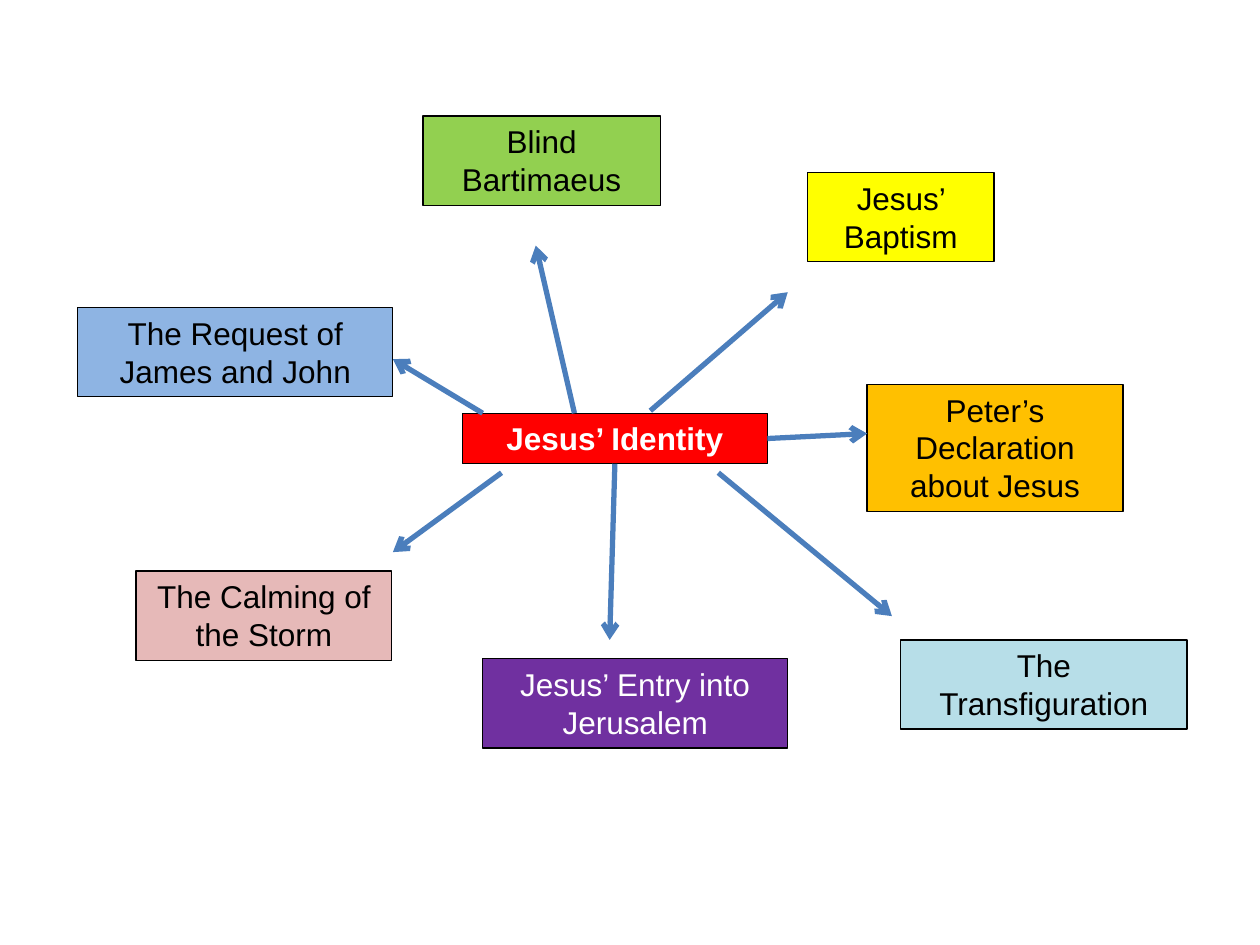
from lxml import etree
from pptx import Presentation
from pptx import util as u
from pptx.dml.color import RGBColor
from pptx.enum import shapes, text
from pptx.oxml.ns import qn

BLACK, WHITE, ARROW_BLUE = "000000", "FFFFFF", "4B7EBC"
BOTTOM, RIGHT = 2, 3


def paint(color_format, hex_color):
    color_format.rgb = RGBColor.from_string(hex_color)


class MindMap:
    font_name = "Arial"
    font_size = u.Pt(18)

    def __init__(self, slide):
        self.slide = slide

    def box(self, label, area, fill, ink=BLACK, bold=False):
        topic = self.slide.shapes.add_shape(
            shapes.MSO_SHAPE.RECTANGLE, *(u.Cm(length) for length in area))
        topic.shadow.inherit = False
        topic.fill.solid()
        paint(topic.fill.fore_color, fill)
        paint(topic.line.color, BLACK)
        topic.line.width = u.Pt(0.75)

        frame = topic.text_frame
        frame.word_wrap = True
        frame.auto_size = text.MSO_AUTO_SIZE.SHAPE_TO_FIT_TEXT
        frame.vertical_anchor = text.MSO_ANCHOR.TOP
        frame.text = label
        paragraph = frame.paragraphs[0]
        paragraph.alignment = text.PP_ALIGN.CENTER
        paragraph.font.name = self.font_name
        paragraph.font.size = self.font_size
        paragraph.font.bold = bold
        paint(paragraph.font.color, ink)
        return topic

    def arrow(self, start, end, source=None, side=None):
        spoke = self.slide.shapes.add_connector(
            shapes.MSO_CONNECTOR.STRAIGHT,
            *(u.Cm(length) for length in start + end))
        if source is not None:
            spoke.begin_connect(source, side)
        paint(spoke.line.color, ARROW_BLUE)
        spoke.line.width = u.Pt(3)
        line = spoke.line._get_or_add_ln()
        etree.SubElement(line, qn("a:tailEnd"), type="arrow")
        etree.SubElement(spoke._element.spPr, qn("a:effectLst"))


def main():
    deck = Presentation()
    deck.slide_width, deck.slide_height = u.Cm(25.4), u.Cm(19.05)
    mind_map = MindMap(deck.slides.add_slide(deck.slide_layouts[6]))

    # Central theme
    identity = mind_map.box("Jesus’ Identity", (9.32, 8.33, 6.15, 1.02),
                            "FF0000", WHITE, bold=True)

    # Surrounding episodes, clockwise
    two_lines, three_lines = 1.8, 2.57
    episodes = [
        ("Jesus’ Baptism", (16.28, 3.48, 3.76, two_lines), "FFFF00", BLACK),
        ("Peter’s Declaration about Jesus",
         (17.48, 7.75, 5.16, three_lines), "FFC000", BLACK),
        ("The Transfiguration", (18.16, 12.9, 5.77, two_lines), "B7DEE8", BLACK),
        ("Jesus’ Entry into Jerusalem",
         (9.73, 13.28, 6.15, two_lines), "7030A0", WHITE),
        ("The Calming of the Storm",
         (2.74, 11.51, 5.16, two_lines), "E6B9B8", BLACK),
        ("The Request of James and John",
         (1.57, 6.2, 6.35, two_lines), "8EB4E3", BLACK),
        ("Blind Bartimaeus", (8.53, 2.34, 4.78, two_lines), "92D050", BLACK),
    ]
    for episode in episodes:
        mind_map.box(*episode)

    # Arrows from the theme to each episode
    mind_map.arrow((11.58, 8.33), (10.8, 4.95))
    mind_map.arrow((13.11, 8.28), (15.88, 5.89))
    mind_map.arrow((15.47, 8.84), (17.48, 8.74), identity, RIGHT)
    mind_map.arrow((14.48, 9.53), (17.98, 12.42))
    mind_map.arrow((12.4, 9.35), (12.29, 12.9), identity, BOTTOM)
    mind_map.arrow((10.11, 9.53), (7.92, 11.13))
    mind_map.arrow((9.73, 8.33), (7.92, 7.24))

    deck.save("out.pptx")


if __name__ == "__main__":
    main()
